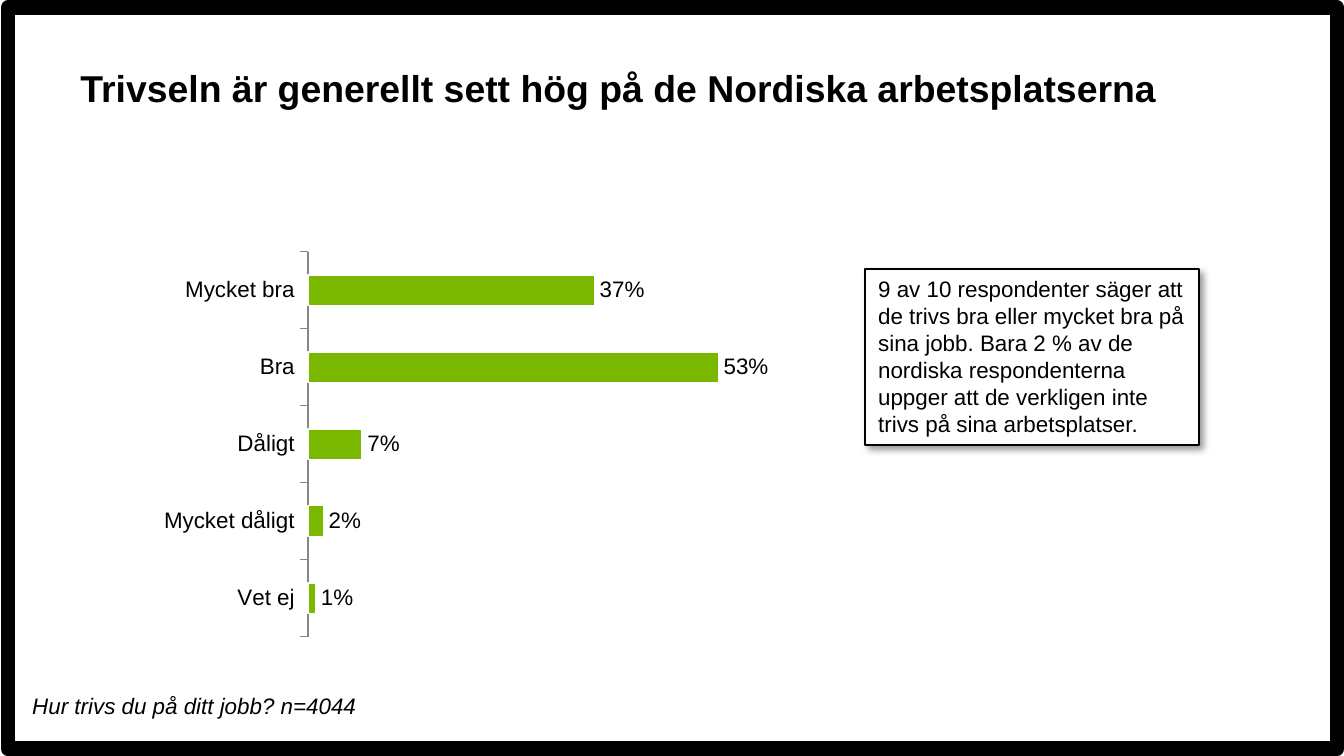
from lxml import etree
from pptx import Presentation
from pptx.chart.data import CategoryChartData
from pptx.dml.color import RGBColor
from pptx.enum.chart import XL_CHART_TYPE, XL_LABEL_POSITION, XL_TICK_MARK
from pptx.enum.shapes import MSO_SHAPE
from pptx.enum.text import MSO_ANCHOR, MSO_AUTO_SIZE, PP_ALIGN
from pptx.oxml import parse_xml
from pptx.oxml.ns import nsdecls, qn
from pptx.util import Pt

BAR = XL_CHART_TYPE.BAR_CLUSTERED
OUTER = XL_LABEL_POSITION.OUTSIDE_END
TICK, BARE = XL_TICK_MARK.OUTSIDE, XL_TICK_MARK.NONE
RECT = MSO_SHAPE.RECTANGLE
TOP, LEFT = MSO_ANCHOR.TOP, PP_ALIGN.LEFT
GROW, FIXED = MSO_AUTO_SIZE.SHAPE_TO_FIT_TEXT, MSO_AUTO_SIZE.NONE

SCALE = 914400 / 134.4
FONT = "Arial"
HUES = {"ink": "000000", "paper": "FFFFFF", "bar": "7AB800", "axis": "868686"}
RATES = {"Vet ej": 0.01, "Mycket dåligt": 0.02, "Dåligt": 0.07,
         "Bra": 0.53, "Mycket bra": 0.37}
PLOT = {"x": 0.246, "y": 0.017, "w": 0.733, "h": 0.958}
TITLE = "Trivseln är generellt sett hög på de Nordiska arbetsplatserna"
NOTE = ("9 av 10 respondenter säger att de trivs bra eller mycket bra på sina jobb. "
        "Bara 2 % av de nordiska respondenterna uppger att de verkligen inte trivs "
        "på sina arbetsplatser.")
ASK = "Hur trivs du på ditt jobb? n=4044"


def px(size):
    """Turn pixels into EMU."""
    return round(size * SCALE)


def hue(name):
    """Look up a named colour."""
    return RGBColor.from_string(HUES[name])


def apply(target, form):
    """Set each attribute in a dict of format values."""
    for key, value in form.items():
        setattr(target, key, value)


def style(font, size, **form):
    """Format a font in the ink colour."""
    apply(font, {"name": FONT, "size": Pt(size), **form})
    font.color.rgb = hue("ink")


def stroke(line, name, width):
    """Colour a line and set its width."""
    line.color.rgb = hue(name)
    line.width = Pt(width)


def write(shape, text, size, fit=GROW, space=None, **form):
    """Fill a shape with one paragraph of text."""
    frame = shape.text_frame
    apply(frame, {"word_wrap": True, "auto_size": fit, "vertical_anchor": TOP})
    para = frame.paragraphs[0]
    apply(para, {"alignment": LEFT, "line_spacing": space})
    run = para.add_run()
    run.text = text
    style(run.font, size, **form)


def add_box(slide, box, width, fill=None):
    """Add an outlined rectangle without a shadow."""
    shape = slide.shapes.add_shape(RECT, *map(px, box))
    shape.shadow.inherit = False
    if fill:
        shape.fill.solid()
        shape.fill.fore_color.rgb = hue(fill)
    else:
        shape.fill.background()
    stroke(shape.line, "ink", width)
    return shape


def add_shade(shape):
    """Cast a soft shadow down to the right."""
    effects = shape._element.spPr.find(qn("a:effectLst"))
    effects.append(parse_xml(
        f'<a:outerShdw {nsdecls("a")} blurRad="{Pt(4)}" dist="{Pt(3)}" '
        f'dir="2700000" algn="tl" rotWithShape="0"><a:srgbClr val="{HUES["ink"]}">'
        '<a:alpha val="40000"/></a:srgbClr></a:outerShdw>'))


def set_plot(chart):
    """Fix the inner plot area within the chart."""
    area = chart._chartSpace.chart.plotArea
    for old in area.findall(qn("c:layout")):
        area.remove(old)
    layout = etree.Element(qn("c:layout"))
    manual = etree.SubElement(layout, qn("c:manualLayout"))
    parts = {"layoutTarget": "inner", "xMode": "edge", "yMode": "edge", **PLOT}
    for key, value in parts.items():
        etree.SubElement(manual, qn(f"c:{key}")).set("val", str(value))
    area.insert(0, layout)


def add_bars(slide, box):
    """Add the bar chart of answers."""
    data = CategoryChartData(number_format="###0%")
    data.categories = list(RATES)
    data.add_series("Series 1", list(RATES.values()))
    chart = slide.shapes.add_chart(BAR, *map(px, box), data).chart
    apply(chart, {"has_legend": False, "has_title": False})
    style(chart.font, 12)
    apply(chart.value_axis, {"visible": False, "has_major_gridlines": False,
                             "minimum_scale": 0, "maximum_scale": 0.6})
    axis = chart.category_axis
    apply(axis, {"major_tick_mark": TICK, "minor_tick_mark": BARE,
                 "has_major_gridlines": False})
    stroke(axis.format.line, "axis", 0.75)
    plot = chart.plots[0]
    apply(plot, {"gap_width": 150, "vary_by_categories": False, "has_data_labels": True})
    apply(plot.data_labels, {"show_value": True, "position": OUTER,
                             "number_format": "###0%", "number_format_is_linked": False})
    style(plot.data_labels.font, 12)
    look = plot.series[0].format
    look.fill.solid()
    look.fill.fore_color.rgb = hue("bar")
    stroke(look.line, "paper", 0.75)
    set_plot(chart)


def main():
    """Build the slide and save it."""
    deck = Presentation()
    apply(deck, {"slide_width": px(1344), "slide_height": px(756)})
    slide = deck.slides.add_slide(deck.slide_layouts[5])
    add_box(slide, (8, 8, 1329, 741), 8)
    title = slide.shapes.title
    apply(title, dict(zip(("left", "top", "width", "height"), map(px, (67, 67, 1210, 89)))))
    write(title, TITLE, 20, FIXED, 0.8, bold=True)
    add_bars(slide, (152, 245, 634, 402))
    note = add_box(slide, (865, 269, 334, 176), 0.75, "paper")
    add_shade(note)
    write(note, NOTE, 12)
    ask = slide.shapes.add_textbox(*map(px, (19, 686, 1312, 41)))
    write(ask, ASK, 12, italic=True)
    deck.save("out.pptx")


if __name__ == "__main__":
    main()
